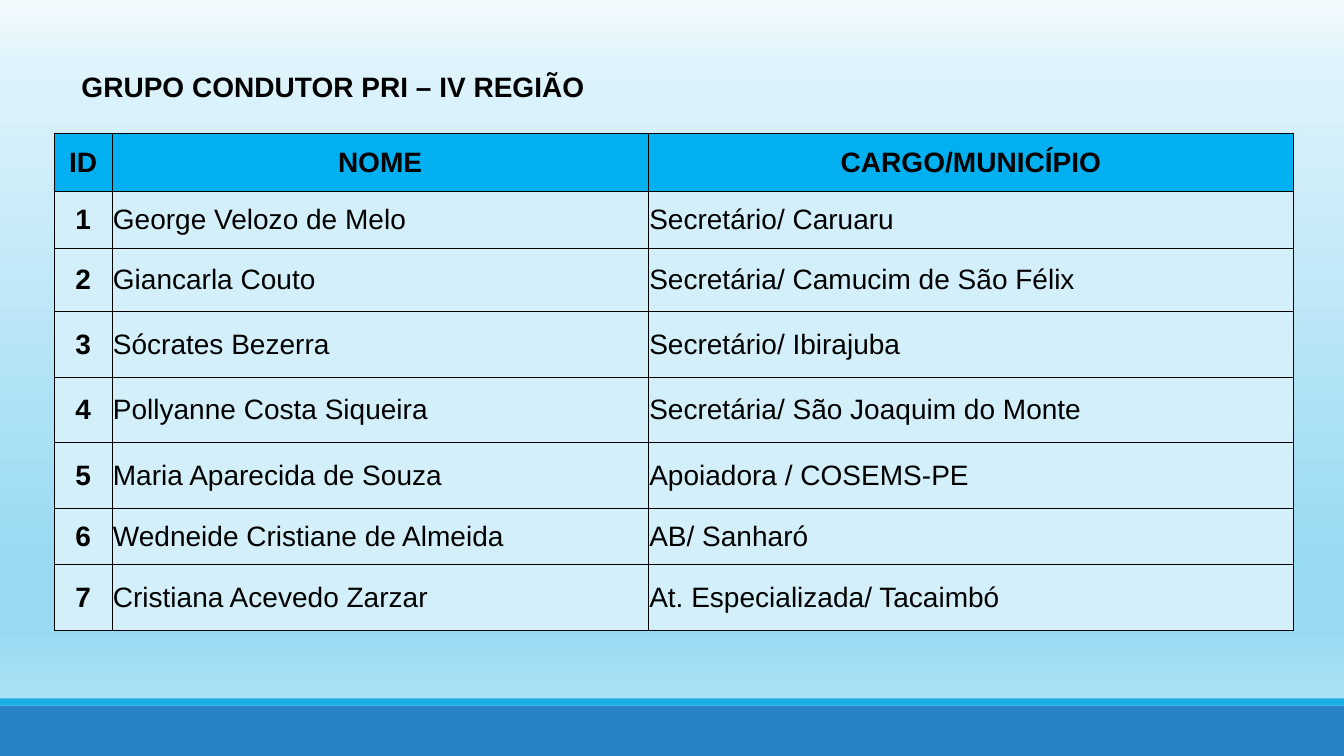
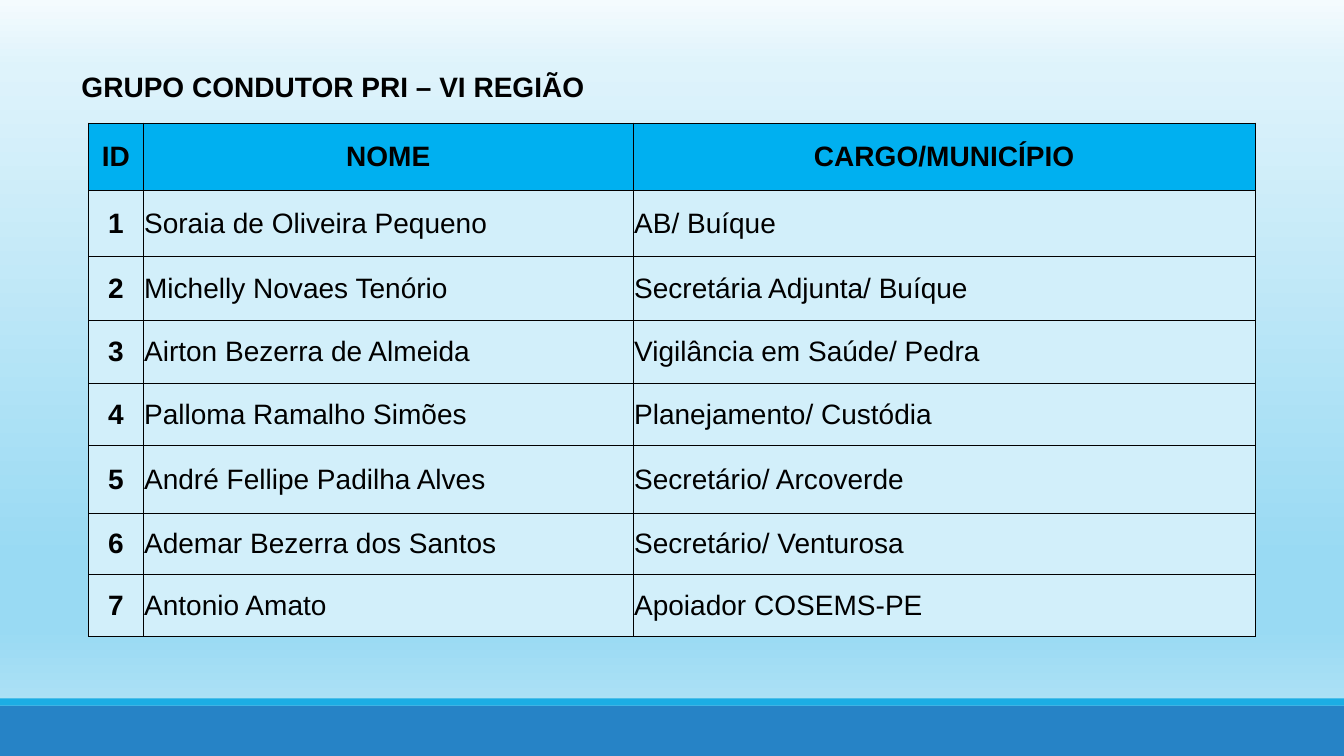
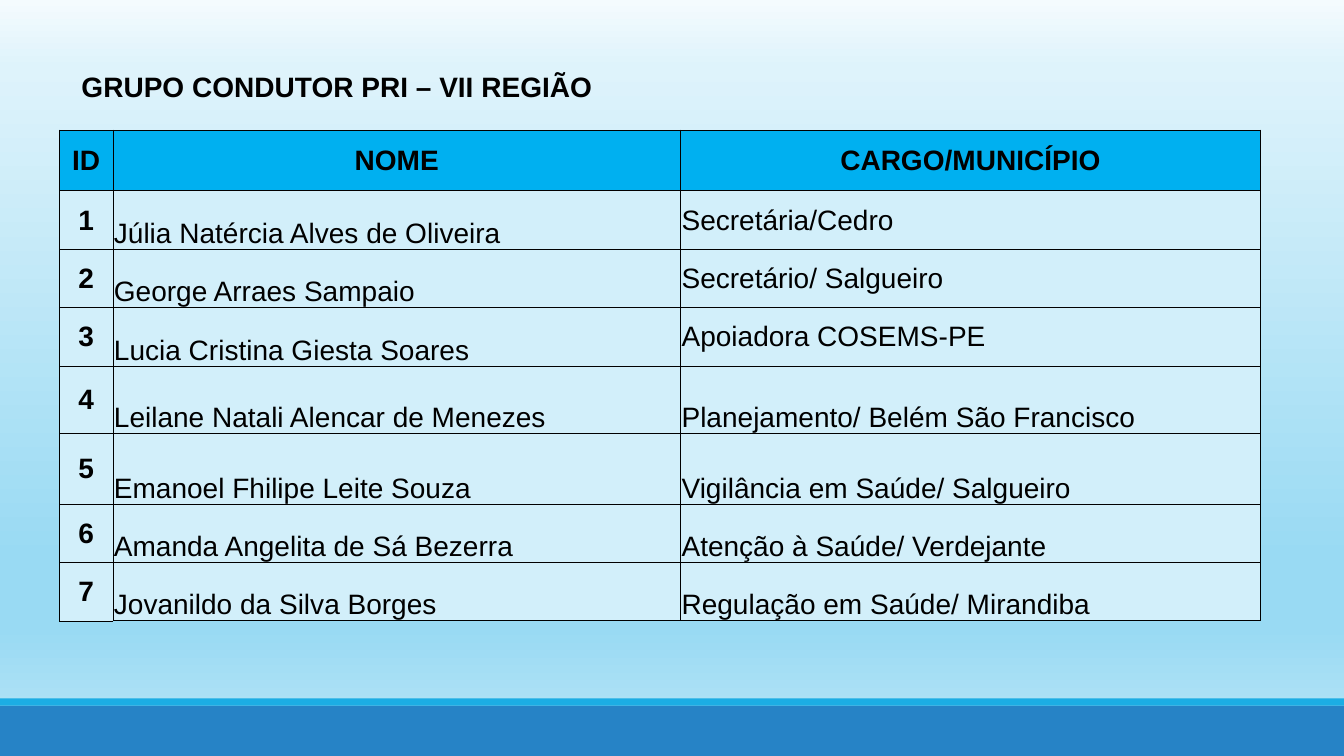
from lxml.etree import SubElement
from pptx import Presentation
from pptx.dml.color import RGBColor
from pptx.enum.shapes import MSO_SHAPE as SHAPE
from pptx.enum.text import MSO_ANCHOR as ANCHOR, MSO_AUTO_SIZE as AUTO, PP_ALIGN as ALIGN
from pptx.oxml.ns import qn
from pptx.util import Inches, Pt

HEADER = ("ID", "NOME", "CARGO/MUNICÍPIO")
GROUPS = [
    {
        "region": "IV",
        "at": (0.54, 1.32),
        "cols": (0.57, 5.32, 6.4),
        "rows": (0.58, 0.56, 0.63, 0.65, 0.65, 0.65, 0.56, 0.65),
        "people": [
            ("George Velozo de Melo", "Secretário/ Caruaru"),
            ("Giancarla Couto", "Secretária/ Camucim de São Félix"),
            ("Sócrates Bezerra", "Secretário/ Ibirajuba"),
            ("Pollyanne Costa Siqueira", "Secretária/ São Joaquim do Monte"),
            ("Maria Aparecida de Souza", "Apoiadora / COSEMS-PE"),
            ("Wedneide Cristiane de Almeida", "AB/ Sanharó"),
            ("Cristiana Acevedo Zarzar", "At. Especializada/ Tacaimbó"),
        ],
    },
    {
        "region": "VI",
        "at": (0.88, 1.22),
        "cols": (0.54, 4.86, 6.17),
        "rows": (0.67, 0.65, 0.64, 0.62, 0.62, 0.67, 0.61, 0.61),
        "people": [
            ("Soraia de Oliveira Pequeno", "AB/ Buíque"),
            ("Michelly Novaes Tenório", "Secretária Adjunta/ Buíque"),
            ("Airton Bezerra de Almeida", "Vigilância em Saúde/ Pedra"),
            ("Palloma Ramalho Simões", "Planejamento/ Custódia"),
            ("André Fellipe Padilha Alves", "Secretário/ Arcoverde"),
            ("Ademar Bezerra dos Santos", "Secretário/ Venturosa"),
            ("Antonio Amato", "Apoiador COSEMS-PE"),
        ],
    },
    {
        "region": "VII",
        "at": (0.59, 1.29),
        "cols": (0.53, 5.63, 5.75),
        "rows": (0.6, 0.58, 0.58, 0.58, 0.67, 0.7, 0.58, 0.58),
        "low_from": {1: 1, 2: 4},
        "thick_from": 4,
        "people": [
            ("Júlia Natércia Alves de Oliveira", "Secretária/Cedro"),
            ("George Arraes Sampaio", "Secretário/ Salgueiro"),
            ("Lucia Cristina Giesta Soares", "Apoiadora COSEMS-PE"),
            ("Leilane Natali Alencar de Menezes", "Planejamento/ Belém São Francisco"),
            ("Emanoel Fhilipe Leite Souza", "Vigilância em Saúde/ Salgueiro"),
            ("Amanda Angelita de Sá Bezerra", "Atenção à Saúde/ Verdejante"),
            ("Jovanildo da Silva Borges", "Regulação em Saúde/ Mirandiba"),
        ],
    },
]


def rgb(value):
    return RGBColor.from_string(value)


def assign(obj, values):
    for name, value in values.items():
        setattr(obj, name, value)


class Deck:
    INK = "000000"
    HEAD = "00B0F0"
    BODY = "D2EFFA"
    SKY = ((0, "F4FBFE"), (9, "DEF3FB"), (74, "99DAF3"), (83, "99DAF3"), (100, "BBE6F7"))
    BANDS = ((7, 0.5, "2683C6"), (6.93, 0.07, "1CADE4"))
    FONT = {"name": "Arial", "size": Pt(20)}
    MARGINS = {
        "margin_left": Inches(0.01),
        "margin_top": Inches(0.01),
        "margin_right": Inches(0.01),
        "margin_bottom": 0,
    }

    def __init__(self):
        self.prs = Presentation()
        assign(self.prs, {"slide_width": Inches(13.33), "slide_height": Inches(7.5)})
        self.slide = None
        self.background()

    def background(self):
        master = self.prs.slide_master
        fill = master.background.fill
        fill.gradient()
        fill.gradient_angle = 270
        stops = next(master.element.iter(qn("a:gsLst")))
        for stop in list(stops):
            stops.remove(stop)
        for pos, color in self.SKY:
            stop = SubElement(stops, qn("a:gs"), pos=str(pos * 1000))
            SubElement(stop, qn("a:srgbClr"), val=color)

    def new_slide(self):
        self.slide = self.prs.slides.add_slide(self.prs.slide_layouts[6])
        for top, height, color in self.BANDS:
            self.band(top, height, color)

    def band(self, top, height, color):
        sp = self.slide.shapes.add_shape(
            SHAPE.RECTANGLE, 0, Inches(top), self.prs.slide_width, Inches(height))
        sp.shadow.inherit = False
        sp.fill.solid()
        sp.fill.fore_color.rgb = rgb(color)
        sp.line.fill.background()

    def run(self, p, text, bold):
        r = p.add_run()
        r.text = text
        assign(r.font, {**self.FONT, "bold": bold})
        r.font.color.rgb = rgb(self.INK)

    def title(self, text):
        sp = self.slide.shapes.add_textbox(
            Inches(0.71), Inches(0.64), Inches(9.61), Inches(0.44))
        tf = sp.text_frame
        assign(tf, {"word_wrap": True, "auto_size": AUTO.SHAPE_TO_FIT_TEXT})
        self.run(tf.paragraphs[0], text, True)

    def borders(self, cell, thick):
        tc_pr = cell._tc.get_or_add_tcPr()
        for side in "LRTB":
            width = Pt(1) if side in thick else Pt(0.5)
            ln = SubElement(tc_pr, qn("a:ln" + side), w=str(int(width)))
            fill = SubElement(ln, qn("a:solidFill"))
            SubElement(fill, qn("a:srgbClr"), val=self.INK)

    def cell(self, cell, text, head, bold, low, thick):
        self.borders(cell, thick)
        cell.fill.solid()
        cell.fill.fore_color.rgb = rgb(self.HEAD if head else self.BODY)
        anchor = ANCHOR.BOTTOM if low else ANCHOR.MIDDLE
        assign(cell, {**self.MARGINS, "vertical_anchor": anchor})
        p = cell.text_frame.paragraphs[0]
        p.alignment = ALIGN.CENTER if bold else ALIGN.LEFT
        self.run(p, text, bold)

    def table(self, at, cols, rows, people, low_from, thick_from):
        left, top = at
        table = self.slide.shapes.add_table(
            len(rows), len(cols), Inches(left), Inches(top),
            Inches(sum(cols)), Inches(sum(rows))).table
        for col, width in zip(table.columns, cols):
            col.width = Inches(width)
        for row, height in zip(table.rows, rows):
            row.height = Inches(height)
        last = len(people)
        lines = [HEADER] + [(str(n), *person) for n, person in enumerate(people, 1)]
        for i, line in enumerate(lines):
            for j, text in enumerate(line):
                thick = ""
                if j and thick_from and i >= thick_from:
                    thick = ("R" if j == 1 else "L") + ("B" if i == last else "")
                low = j in low_from and i >= low_from[j]
                self.cell(table.cell(i, j), text, i == 0, i == 0 or j == 0, low, thick)


def main():
    deck = Deck()
    for group in GROUPS:
        deck.new_slide()
        deck.table(group["at"], group["cols"], group["rows"], group["people"],
                   group.get("low_from", {}), group.get("thick_from"))
        deck.title(f"GRUPO CONDUTOR PRI – {group['region']} REGIÃO")
    deck.prs.save("out.pptx")


if __name__ == "__main__":
    main()
